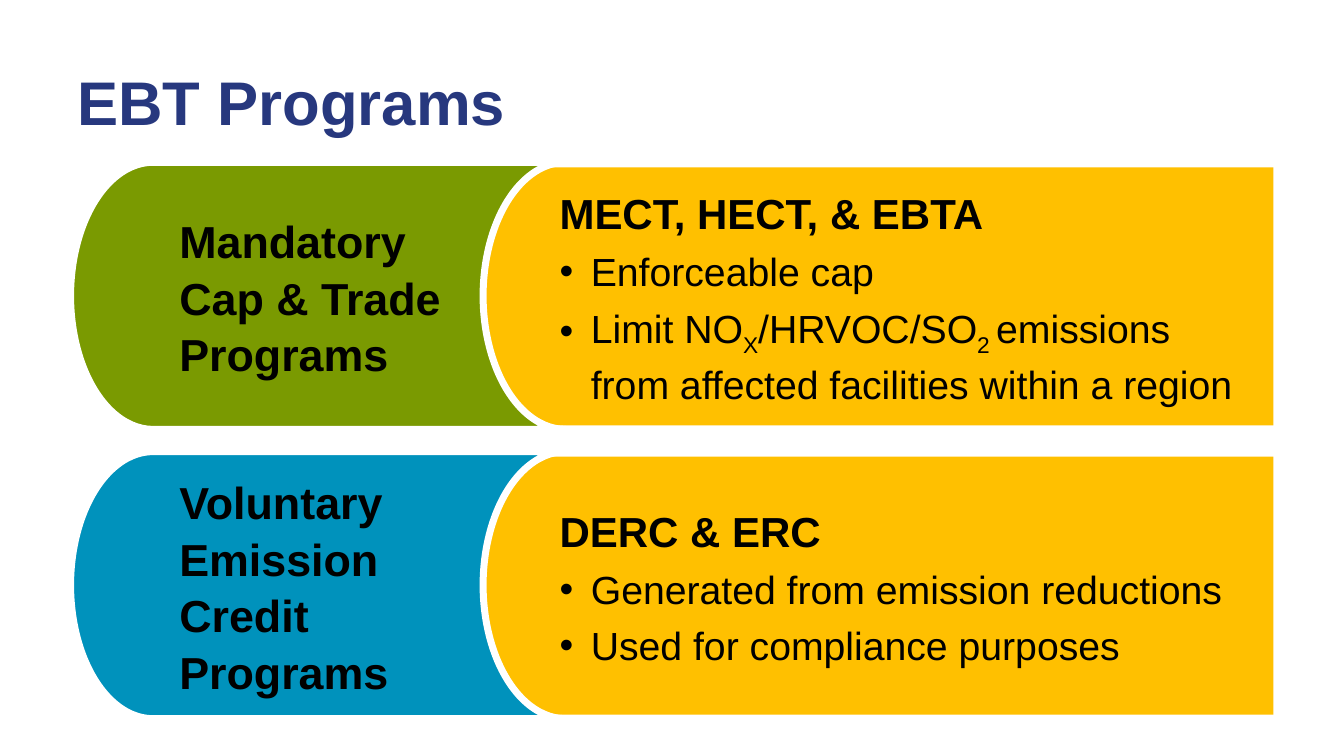
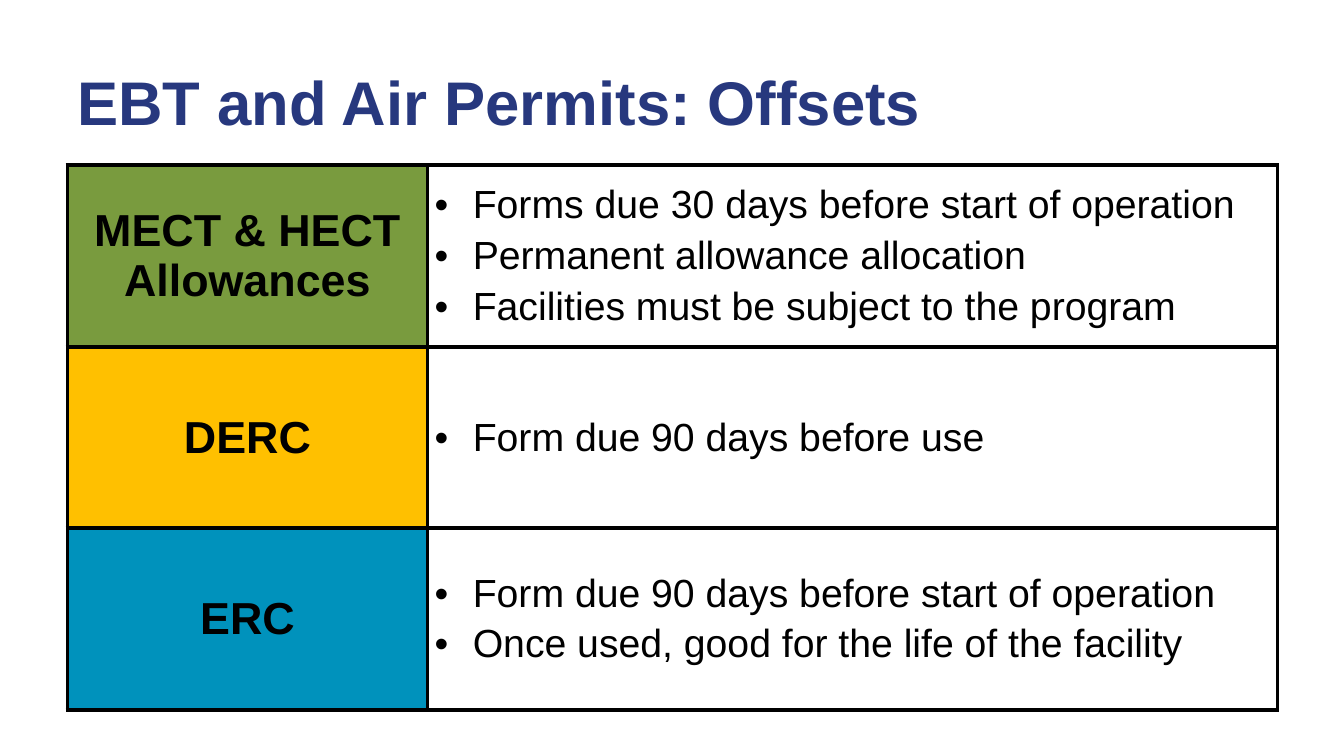
from lxml import etree
from pptx import Presentation
from pptx import util as u
from pptx.dml.color import RGBColor
from pptx.enum import shapes, text
from pptx.oxml import ns

Inches, Pt = u.Inches, u.Pt

COLORS = {"title": "27387E", "text": "000000", "white": "FFFFFF",
          "gold": "FFC000", "lime": "7A9A01", "moss": "799B3E", "blue": "0092BC"}
FONT = "Arial"
HEAD, SUB, BODY = 32, 30, 28

# A bullet is a list of runs; every second run is a subscript.
PROGRAMS = [
    ("Mandatory Cap & Trade Programs", "lime", "MECT, HECT, & EBTA",
     [["Enforceable cap"],
      ["Limit NO", "X", "/HRVOC/SO", "2 ",
       "emissions from affected facilities within a region"]]),
    ("Voluntary Emission Credit Programs", "blue", "DERC & ERC",
     [["Generated from emission reductions"],
      ["Used for compliance purposes"]]),
]
OFFSETS = [
    ("MECT & HECT Allowances", "moss",
     [["Forms due 30 days before start of operation"],
      ["Permanent allowance allocation"],
      ["Facilities must be subject to the program"]]),
    ("DERC", "gold", [["Form due 90 days before use"]]),
    ("ERC", "blue",
     [["Form due 90 days before start of operation"],
      ["Once used, good for the life of the facility"]]),
]


def rgb(name):
    return RGBColor.from_string(COLORS[name])


def paint(fill, name):
    fill.solid()
    fill.fore_color.rgb = rgb(name)


def add_xml(parent, tag, **attrs):
    return etree.SubElement(parent, ns.qn(tag), attrs)


def set_frame(frame, insets):
    """Wrap and centre vertically; insets are left, top, right, bottom."""
    frame.word_wrap = True
    frame.vertical_anchor = text.MSO_ANCHOR.MIDDLE
    (frame.margin_left, frame.margin_top,
     frame.margin_right, frame.margin_bottom) = map(Inches, insets)


def write(frame, runs, size, bold=False, color="text", left=0, hang=0,
          after=0, lines=1.0, align=text.PP_ALIGN.LEFT):
    """Add a paragraph; a hanging indent gives it a bullet."""
    para = frame.paragraphs[0]
    if para.runs:
        para = frame.add_paragraph()
    props = para._p.get_or_add_pPr()
    props.set("marL", str(Inches(left)))
    props.set("indent", str(-Inches(hang)))
    if hang:
        add_xml(props, "a:buFont", typeface=FONT)
        add_xml(props, "a:buChar", char="•")
    para.alignment = align
    para.line_spacing = lines
    para.space_after = Pt(after)
    for i, words in enumerate(runs):
        run = para.add_run()
        run.text = words
        font = run.font
        font.name, font.size, font.bold = FONT, Pt(size), bold
        font.color.rgb = rgb(color)
        if i % 2:
            run._r.get_or_add_rPr().set("baseline", "-25000")


def add_slide(deck, title):
    slide = deck.slides.add_slide(deck.slide_layouts[6])
    box = slide.shapes.add_textbox(*map(Inches, (0.67, 0.65, 12, 0.8)))
    set_frame(box.text_frame, (0.1, 0.05, 0.1, 0.05))
    write(box.text_frame, [title], 44, True, "title", lines=0.9)
    return slide


def add_block(slide, kind, place, color, insets):
    block = slide.shapes.add_shape(kind, *map(Inches, place))
    block.shadow.inherit = False
    paint(block.fill, color)
    block.line.fill.background()
    set_frame(block.text_frame, insets)
    return block


def show_programs(deck):
    slide = add_slide(deck, "EBT Programs")
    kinds = shapes.MSO_SHAPE
    for i, (name, color, heading, points) in enumerate(PROGRAMS):
        top = 1.61 + i * 2.87
        panel = add_block(slide, kinds.RECTANGLE, (4.78, top + 0.05, 7.85, 2.56),
                          "gold", (0.27, 0.24, 0.37, 0.24))
        write(panel.text_frame, [heading], SUB, True, left=0.5, after=5, lines=1.05)
        for runs in points:
            write(panel.text_frame, runs, BODY, left=0.81, hang=0.31,
                  after=5, lines=1.05)
        label = add_block(slide, kinds.FLOWCHART_STORED_DATA, (0.7, top, 4.91, 2.65),
                          color, (0.26, 0.19, 0.26, 0.19))
        label.line.color.rgb = rgb("white")
        label.line.width = Pt(5)
        write(label.text_frame, [name], HEAD, True, lines=1.05)


def set_borders(cell):
    props = cell._tc.get_or_add_tcPr()
    for side in "LRTB":
        line = add_xml(props, "a:ln" + side, w=str(Pt(3)))
        add_xml(add_xml(line, "a:solidFill"), "a:srgbClr", val=COLORS["text"])


def show_offsets(deck):
    slide = add_slide(deck, "EBT and Air Permits: Offsets")
    place = map(Inches, (0.67, 1.64, 12, 5.4))
    table = slide.shapes.add_table(len(OFFSETS), 2, *place).table
    table.first_row = table.horz_banding = False
    for col, width in zip(table.columns, (3.57, 8.43)):
        col.width = Inches(width)
    for row, (name, color, points) in zip(table.rows, OFFSETS):
        row.height = Inches(1.8)
        for cell, shade in zip(row.cells, (color, "white")):
            set_borders(cell)
            paint(cell.fill, shade)
            cell.vertical_anchor = text.MSO_ANCHOR.MIDDLE
            cell.margin_left = cell.margin_right = Inches(0.07)
            cell.margin_top = cell.margin_bottom = 0
        label, notes = row.cells
        write(label.text_frame, [name], HEAD, True, align=text.PP_ALIGN.CENTER)
        for runs in points:
            write(notes.text_frame, runs, BODY, left=0.38, hang=0.38, after=5)


def main():
    deck = Presentation()
    deck.slide_width, deck.slide_height = Inches(13.33), Inches(7.5)
    show_programs(deck)
    show_offsets(deck)
    deck.save("out.pptx")


if __name__ == "__main__":
    main()
